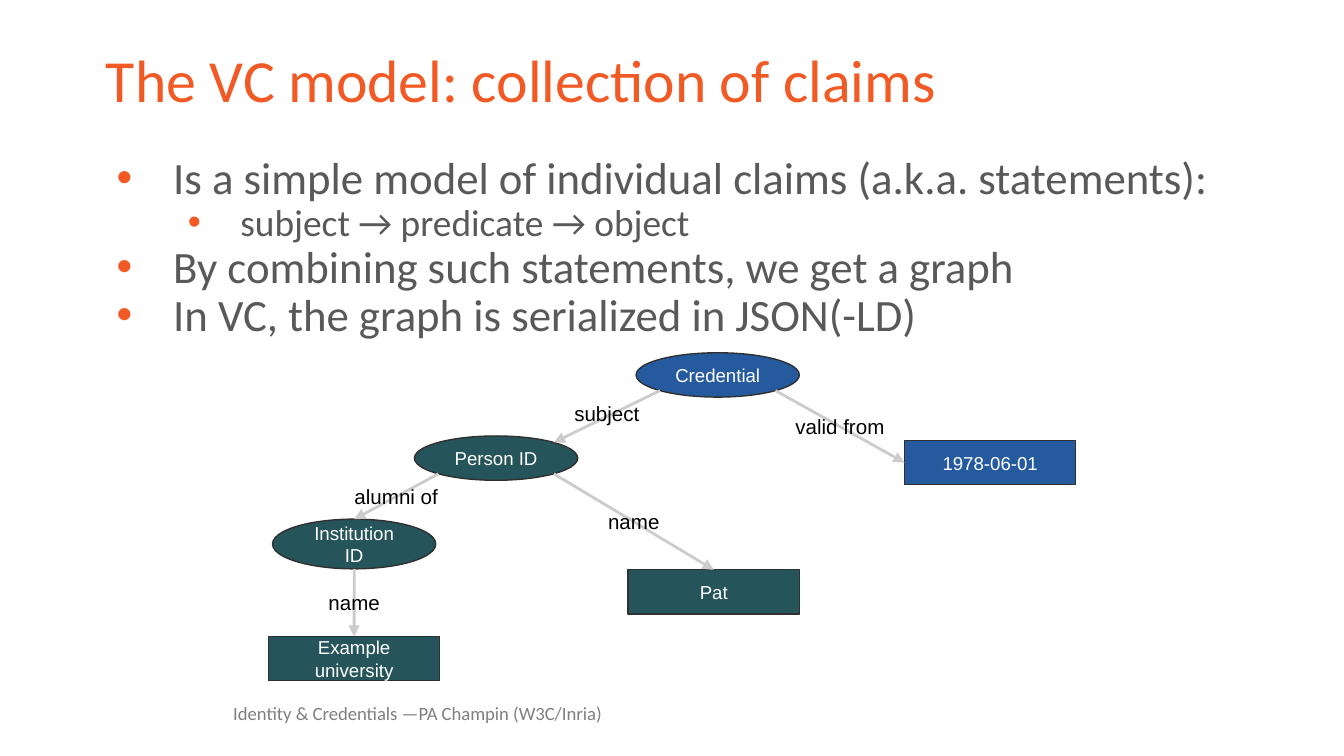
from math import sqrt
from lxml.etree import SubElement
from pptx import Presentation
from pptx.dml.color import RGBColor
from pptx.enum.shapes import MSO_CONNECTOR, MSO_SHAPE
from pptx.enum.text import MSO_ANCHOR, MSO_AUTO_SIZE, PP_ALIGN
from pptx.oxml.ns import qn
from pptx.util import Inches, Pt

HUES = {"orange": "F15A24", "text": "595959", "foot": "7F7F7F", "black": "000000",
        "white": "FFFFFF", "teal": "25545A", "blue": "265A9F", "edge": "303030",
        "link": "CCCCCC"}
HUE = {name: RGBColor.from_string(code) for name, code in HUES.items()}

deck = Presentation()
deck.slide_width = Inches(10)
deck.slide_height = deck.slide_width * 9 // 16
UNIT = deck.slide_width / 100  # grid of 100 columns, with rows as tall as a column is wide
slide = deck.slides.add_slide(deck.slide_layouts[1])
shapes = slide.shapes


def grid(*cells):
    return [round(cell * UNIT) for cell in cells]


def write(shape, lines, size, hue, face, align=PP_ALIGN.LEFT, lead=1.0,
          anchor=MSO_ANCHOR.MIDDLE, pad=(1, 1)):
    """Fill a shape with lines of text in one style; pad is side and top inset in cells."""
    frame = shape.text_frame
    side, top = grid(*pad)
    look = {"word_wrap": True, "auto_size": MSO_AUTO_SIZE.NONE, "vertical_anchor": anchor,
            "margin_left": side, "margin_right": side,
            "margin_top": top, "margin_bottom": top}
    for key, value in look.items():
        setattr(frame, key, value)
    frame.text = "\n".join(lines)
    for para in frame.paragraphs:
        for key, value in {"alignment": align, "line_spacing": lead,
                           "space_before": Pt(0), "space_after": Pt(0)}.items():
            setattr(para, key, value)
        font = para.runs[0].font
        font.name, font.size, font.color.rgb = face, Pt(size), HUE[hue]
    return frame.paragraphs


# Title, list and footer
title, body = shapes.title, shapes.placeholders[1]
foot = shapes.add_textbox(0, 0, 0, 0)
for shape, cells in ((title, (6.88, 3, 86.2, 6.3)), (body, (6.88, 11.1, 86.2, 39.5)),
                     (foot, (17.36, 52.15, 30.3, 1.8))):
    shape.left, shape.top, shape.width, shape.height = grid(*cells)

write(title, ["The VC model: collection of claims"], 32, "orange", "Calibri",
      lead=0.9, pad=(1, 0.5))
write(foot, ["Identity & Credentials —PA Champin (W3C/Inria)"], 10, "foot", "Calibri",
      lead=0.9, anchor=MSO_ANCHOR.BOTTOM, pad=(0, 0))

points = [(0, "Is a simple model of individual claims (a.k.a. statements):"),
          (1, "subject → predicate → object"),
          (0, "By combining such statements, we get a graph"),
          (0, "In VC, the graph is serialized in JSON(-LD)")]
paras = write(body, [text for _, text in points], 24, "text", "Calibri",
              lead=0.9, anchor=MSO_ANCHOR.TOP, pad=(1, 0.5))
for para, (level, _) in zip(paras, points):
    para.level = level
    para.runs[0].font.size = Pt(24 - 4 * level)
    props = para._p.get_or_add_pPr()
    left, hang = grid(5 + 5 * level, -4.2 + 0.3 * level)
    props.set("marL", str(left))
    props.set("indent", str(hang))
    tint = SubElement(props, qn("a:buClr"))
    SubElement(tint, qn("a:srgbClr"), val=HUES["orange"])
    SubElement(props, qn("a:buFont"), typeface="Arial")
    SubElement(props, qn("a:buChar"), char="•")

# Graph nodes
OVAL, RECT = MSO_SHAPE.OVAL, MSO_SHAPE.RECTANGLE
nodes = {}
for name, kind, hue, x, y, high in (
        ("Person ID", OVAL, "teal", 30.84, 32.44, 3.3),
        ("Institution ID", OVAL, "teal", 20.28, 38.63, 3.7),
        ("Example university", RECT, "teal", 19.98, 47.36, 3.3),
        ("Pat", RECT, "teal", 46.74, 42.4, 3.3),
        ("Credential", OVAL, "blue", 47.33, 26.25, 3.3),
        ("1978-06-01", RECT, "blue", 67.3, 32.77, 3.3)):
    wide = 12.15 if kind == OVAL else 12.74
    node = nodes[name] = shapes.add_shape(kind, *grid(x, y, wide, high))
    node.shadow.inherit = False
    node.fill.solid()
    node.fill.fore_color.rgb = HUE[hue]
    node.line.color.rgb, node.line.width = HUE["edge"], Pt(0.75)
    write(node, [name], 10, "white", "Arial", PP_ALIGN.CENTER)

# Links run between sides of nodes, each with its label near the middle, raised by lift
TOP, LEFT, BASE = (0, -1), (-1, 0), (0, 1)
SITES = {TOP: 0, LEFT: 1}
for start, out, end, into, label, lift in (
        ("Person ID", (1, 1), "Pat", TOP, "name", 0),
        ("Person ID", (-1, 1), "Institution ID", TOP, "alumni of", 0),
        ("Institution ID", BASE, "Example university", TOP, "name", 0),
        ("Credential", (-1, 1), "Person ID", (1, -1), "subject", 0.2),
        ("Credential", (1, 1), "1978-06-01", LEFT, "valid from", 0)):
    ends = []
    for name, (across, down) in ((start, out), (end, into)):
        node = nodes[name]
        reach = 1 / sqrt(abs(across) + abs(down))
        ends += [round(node.left + node.width / 2 * (1 + across * reach)),
                 round(node.top + node.height / 2 * (1 + down * reach))]
    link = shapes.add_connector(MSO_CONNECTOR.STRAIGHT, *ends)
    if into in SITES:
        link.end_connect(nodes[end], SITES[into])
    link.line.color.rgb, link.line.width = HUE["link"], Pt(1.5)
    props = link._element.spPr
    SubElement(props.find(qn("a:ln")), qn("a:tailEnd"), type="triangle")
    SubElement(props, qn("a:effectLst"))

    wide, high, rise = grid(8.7, 3.9, lift)
    note = shapes.add_textbox((ends[0] + ends[2] - wide) // 2,
                              (ends[1] + ends[3] - high) // 2 - rise, wide, high)
    write(note, [label], 11, "black", "Arial", PP_ALIGN.CENTER, anchor=MSO_ANCHOR.TOP)

deck.save("out.pptx")
